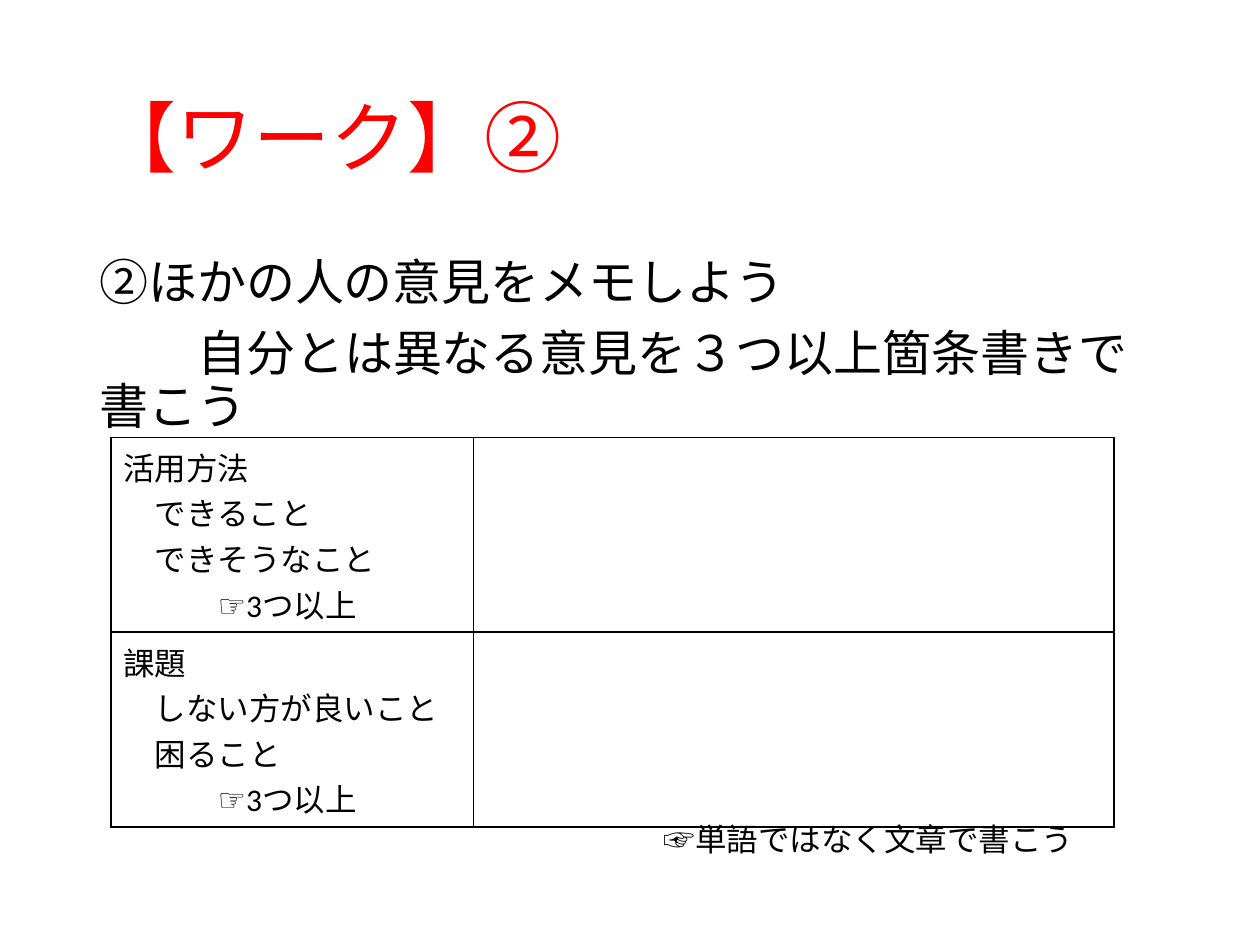
from lxml import etree
from pptx import Presentation
from pptx.dml.color import RGBColor
from pptx.enum.text import MSO_ANCHOR
from pptx.oxml.ns import qn
from pptx.util import Inches, Pt

TOP, MIDDLE = MSO_ANCHOR.TOP, MSO_ANCHOR.MIDDLE
COLORS = {"title": "FF0000", "text": "000000", "border": "000000"}

prs = Presentation()
prs.slide_width, prs.slide_height = Inches(10), Inches(7.5)
W, H = prs.slide_width, prs.slide_height
s = prs.slides.add_slide(prs.slide_layouts[6])


def write(tf, lines, size=18, color="text", spacing=None, gap=0, anchor=TOP):
    tf.word_wrap = True
    tf.vertical_anchor = anchor
    for i, (text, indent) in enumerate(lines):
        p = tf.paragraphs[0] if i == 0 else tf.add_paragraph()
        p._p.get_or_add_pPr().set("indent", str(Pt(indent * size)))
        p.line_spacing = spacing
        p.space_before = Pt(gap if i else 0)
        r = p.add_run()
        r.text = text
        r.font.size = Pt(size)
        r.font.name = "Calibri"
        r.font.color.rgb = RGBColor.from_string(COLORS[color])


def add_text(left, top, width, height, lines, **style):
    sp = s.shapes.add_textbox(int(W * left), int(H * top), int(W * width), int(H * height))
    write(sp.text_frame, lines, **style)


add_text(0.069, 0.053, 0.862, 0.193, [("【ワーク】②", 0)],
         size=44, color="title", spacing=0.9, anchor=MIDDLE)
add_text(0.069, 0.267, 0.862, 0.145,
         [("②ほかの人の意見をメモしよう", 0),
          ("自分とは異なる意見を３つ以上箇条書きで書こう", 2)],
         size=28, spacing=0.9, gap=10)

topics = [
    [("活用方法", 0), ("できること", 1), ("できそうなこと", 1), ("☞3つ以上", 3)],
    [("課題", 0), ("しない方が良いこと", 1), ("困ること", 1), ("☞3つ以上", 3)],
]
col_shares = [0.288, 0.508]
row_share = 0.206
frame = s.shapes.add_table(len(topics), len(col_shares), int(W * 0.088), int(H * 0.463),
                           int(W * sum(col_shares)), int(H * row_share * len(topics)))
table = frame.table
table.first_row = table.horz_banding = False
for column, share in zip(table.columns, col_shares):
    column.width = int(W * share)
for row, lines in zip(table.rows, topics):
    row.height = int(H * row_share)
    write(row.cells[0].text_frame, lines)
    for cell in row.cells:
        tcPr = cell._tc.get_or_add_tcPr()
        for side in ("a:lnL", "a:lnR", "a:lnT", "a:lnB"):
            ln = etree.SubElement(tcPr, qn(side), w=str(Pt(1)))
            fill = etree.SubElement(ln, qn("a:solidFill"))
            etree.SubElement(fill, qn("a:srgbClr"), val=COLORS["border"])
        cell.fill.background()

add_text(0.517, 0.861, 0.415, 0.053, [("☞単語ではなく文章で書こう", 0)])

prs.save("out.pptx")
